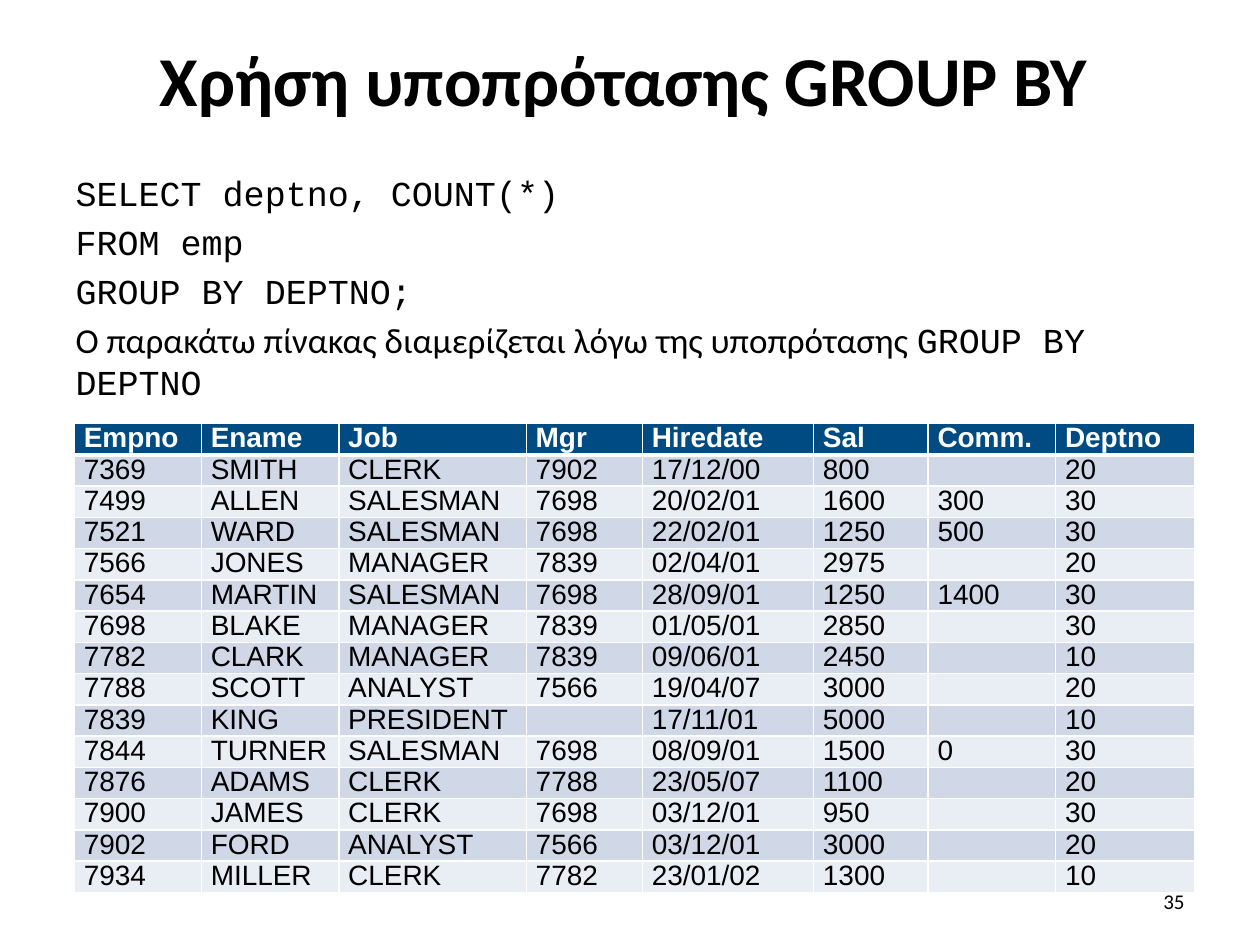
from lxml.etree import SubElement
from pptx import Presentation
from pptx.dml.color import RGBColor
from pptx.enum.text import MSO_ANCHOR as Anchor, MSO_AUTO_SIZE as AutoSize, PP_ALIGN as Align
from pptx.oxml.ns import qn
from pptx.util import Cm, Pt

BLACK, WHITE = "000000", "FFFFFF"
HEADER_FILL, BAND_FILLS = "004B82", ("D0D8E8", "E9EDF4")
SANS, MONO, TABLE_FONT = "Calibri", "Courier New", "Arial"

QUERY = ["SELECT deptno, COUNT(*)", "FROM emp", "GROUP BY DEPTNO;"]
EXPLANATION = "Ο παρακάτω πίνακας διαμερίζεται λόγω της υποπρότασης "

COLUMNS = {"Empno": 2.56, "Ename": 2.77, "Job": 3.78, "Mgr": 2.34,
           "Hiredate": 3.45, "Sal": 2.31, "Comm.": 2.57, "Deptno": 2.81}
ROW_HEIGHT = 0.63
EMPLOYEES = [
    ("7369", "SMITH", "CLERK", "7902", "17/12/00", "800", "", "20"),
    ("7499", "ALLEN", "SALESMAN", "7698", "20/02/01", "1600", "300", "30"),
    ("7521", "WARD", "SALESMAN", "7698", "22/02/01", "1250", "500", "30"),
    ("7566", "JONES", "MANAGER", "7839", "02/04/01", "2975", "", "20"),
    ("7654", "MARTIN", "SALESMAN", "7698", "28/09/01", "1250", "1400", "30"),
    ("7698", "BLAKE", "MANAGER", "7839", "01/05/01", "2850", "", "30"),
    ("7782", "CLARK", "MANAGER", "7839", "09/06/01", "2450", "", "10"),
    ("7788", "SCOTT", "ANALYST", "7566", "19/04/07", "3000", "", "20"),
    ("7839", "KING", "PRESIDENT", "", "17/11/01", "5000", "", "10"),
    ("7844", "TURNER", "SALESMAN", "7698", "08/09/01", "1500", "0", "30"),
    ("7876", "ADAMS", "CLERK", "7788", "23/05/07", "1100", "", "20"),
    ("7900", "JAMES", "CLERK", "7698", "03/12/01", "950", "", "30"),
    ("7902", "FORD", "ANALYST", "7566", "03/12/01", "3000", "", "20"),
    ("7934", "MILLER", "CLERK", "7782", "23/01/02", "1300", "", "10"),
]


def paint(color_format, hex_color):
    color_format.rgb = RGBColor.from_string(hex_color)


def place(shape, left, top, width, height):
    shape.left, shape.top = Cm(left), Cm(top)
    shape.width, shape.height = Cm(width), Cm(height)


def add_run(paragraph, text, size, font_name, color=BLACK, bold=False):
    run = paragraph.add_run()
    run.text = text
    run.font.size, run.font.name, run.font.bold = Pt(size), font_name, bold
    paint(run.font.color, color)


def fill_title(title):
    place(title, 1.3, 0.33, 22.86, 2.51)
    frame = title.text_frame
    frame.vertical_anchor, frame.auto_size = Anchor.MIDDLE, AutoSize.NONE
    heading = frame.paragraphs[0]
    heading.alignment = Align.CENTER
    add_run(heading, "Χρήση υποπρότασης GROUP BY ", 40, SANS, bold=True)


def fill_body(body):
    place(body, 1.27, 3.33, 22.86, 5.41)
    frame = body.text_frame
    frame.auto_size = AutoSize.NONE
    lines = [[(text, MONO)] for text in QUERY]
    lines.append([(EXPLANATION, SANS), ("GROUP BY DEPTNO", MONO)])
    for index, parts in enumerate(lines):
        paragraph = frame.add_paragraph() if index else frame.paragraphs[0]
        properties = paragraph._p.get_or_add_pPr()
        properties.set("marL", "0")
        properties.set("indent", "0")
        SubElement(properties, qn("a:buNone"))
        for text, font_name in parts:
            add_run(paragraph, text, 20, font_name)


def set_borders(cell, top=1, bottom=1):
    """Draw white borders, with the top and bottom widths in points."""
    properties = cell._tc.get_or_add_tcPr()
    for side, width in {"L": 1, "R": 1, "T": top, "B": bottom}.items():
        line = SubElement(properties, qn(f"a:ln{side}"), w=str(Pt(width)))
        SubElement(SubElement(line, qn("a:solidFill")), qn("a:srgbClr"), val=WHITE)


def fill_cell(cell, text, row):
    is_header = row == 0
    set_borders(cell, top=3 if row == 1 else 1, bottom=3 if is_header else 1)
    cell.fill.solid()
    paint(cell.fill.fore_color, HEADER_FILL if is_header else BAND_FILLS[(row - 1) % 2])
    cell.margin_left = cell.margin_right = Cm(0.19)
    cell.margin_top = cell.margin_bottom = 0
    paragraph = cell.text_frame.paragraphs[0]
    paragraph.line_spacing = 0.97
    if text:
        add_run(paragraph, text, 16, TABLE_FONT, WHITE if is_header else BLACK, is_header)
    else:
        # A small end mark keeps an empty cell from stretching its row.
        end_mark = SubElement(paragraph._p, qn("a:endParaRPr"), sz="1200")
        SubElement(end_mark, qn("a:latin"), typeface=TABLE_FONT)


def add_employee_table(slide):
    records = [tuple(COLUMNS), *EMPLOYEES]
    table = slide.shapes.add_table(
        len(records), len(COLUMNS), Cm(1.5), Cm(8.54),
        Cm(sum(COLUMNS.values())), Cm(ROW_HEIGHT * len(records))).table
    for column, width in zip(table.columns, COLUMNS.values()):
        column.width = Cm(width)
    for row, record in enumerate(records):
        table.rows[row].height = Cm(ROW_HEIGHT)
        for column, text in enumerate(record):
            fill_cell(table.cell(row, column), text, row)


def add_page_number(slide, number):
    box = slide.shapes.add_textbox(Cm(18.21), Cm(17.65), Cm(5.92), Cm(1.02))
    frame = box.text_frame
    frame.word_wrap, frame.vertical_anchor = True, Anchor.MIDDLE
    frame.paragraphs[0].alignment = Align.RIGHT
    add_run(frame.paragraphs[0], number, 12, SANS)


def main():
    deck = Presentation()
    deck.slide_width, deck.slide_height = Cm(25.4), Cm(19.05)
    slide = deck.slides.add_slide(deck.slide_layouts[1])
    fill_title(slide.shapes.title)
    fill_body(slide.placeholders[1])
    add_employee_table(slide)
    add_page_number(slide, "35")
    deck.save("out.pptx")


if __name__ == "__main__":
    main()
